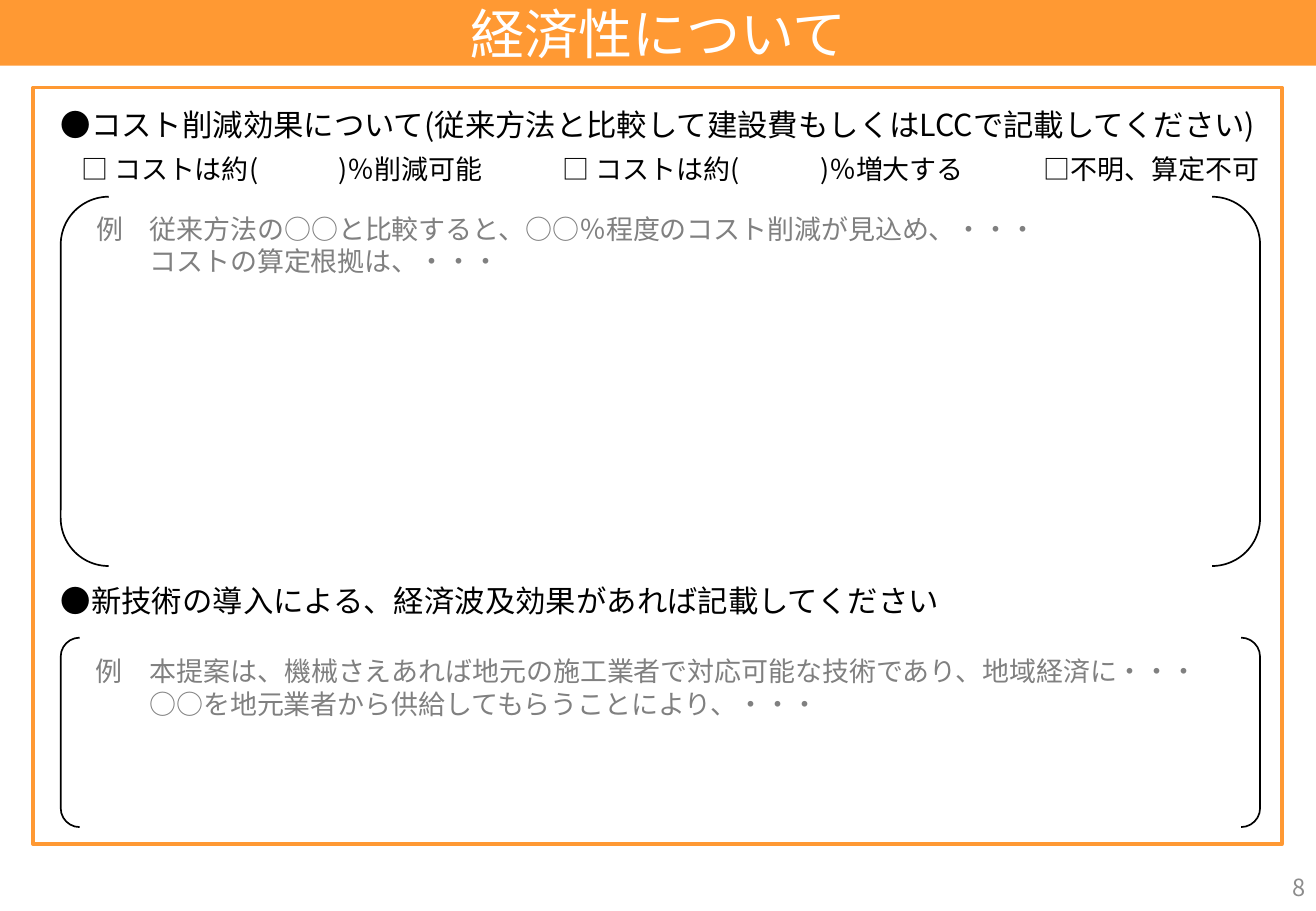
from dataclasses import dataclass

from lxml.etree import SubElement
from pptx import Presentation
from pptx.dml.color import RGBColor
from pptx.enum.shapes import MSO_SHAPE as Preset
from pptx.enum.text import MSO_ANCHOR as Anchor, MSO_AUTO_SIZE as AutoSize, PP_ALIGN as Align
from pptx.oxml.ns import qn
from pptx.shapes.autoshape import Shape
from pptx.slide import Slide
from pptx.util import Inches, Pt

FONT = "Noto Sans CJK JP"
COLORS = {
    "orange": "FF9933",
    "white": "FFFFFF",
    "black": "000000",
    "example": "808080",
    "number": "8C8C8C",
}
PAGE_WIDTH, PAGE_HEIGHT = 10.83, 7.5
BAR_HEIGHT = 0.54
LEFT, SECTION_WIDTH = 0.5, 9.87
EXAMPLE_LEFT, EXAMPLE_INDENT = 0.79, 0.44
OPTION_STEP = 3.96
OPTIONS = ["□ コストは約(　　　)％削減可能", "□ コストは約(　　　)％増大する", "□不明、算定不可"]


@dataclass(frozen=True)
class Section:
    """A heading with a bracketed answer field and its example text."""

    heading: str
    heading_top: float
    heading_width: float
    bracket_top: float
    bracket_height: float
    curve: float
    example: tuple[str, str]
    example_top: float
    example_width: float


SECTIONS = [
    Section(
        "●コスト削減効果について(従来方法と比較して建設費もしくはLCCで記載してください)",
        0.87, 10.22, 1.62, 3.04, 0.13,
        ("例　従来方法の○○と比較すると、○○％程度のコスト削減が見込め、・・・",
         "コストの算定根拠は、・・・"),
        1.75, 7.85,
    ),
    Section(
        "●新技術の導入による、経済波及効果があれば記載してください",
        4.79, 7.32, 5.25, 1.56, 0.1,
        ("例　本提案は、機械さえあれば地元の施工業者で対応可能な技術であり、地域経済に・・・",
         "○○を地元業者から供給してもらうことにより、・・・"),
        5.39, 9.2,
    ),
]


def rgb(name: str) -> RGBColor:
    """Look up a named colour."""
    return RGBColor.from_string(COLORS[name])


def write(box: Shape, *lines: str, size: int, color: str, align: Align = Align.LEFT,
          anchor: Anchor = Anchor.TOP, inset: float = 0, indent: float = 0) -> None:
    """Fill a box with formatted lines, indenting those after the first."""
    frame = box.text_frame
    frame.word_wrap = True
    frame.auto_size = AutoSize.NONE
    frame.vertical_anchor = anchor
    frame.margin_left = frame.margin_right = Inches(inset)
    frame.margin_top = frame.margin_bottom = Inches(inset / 2)
    for index, line in enumerate(lines):
        para = frame.add_paragraph() if index else frame.paragraphs[0]
        para.alignment = align
        if index and indent:
            para._p.get_or_add_pPr().set("marL", str(Inches(indent)))
        span = para.add_run()
        span.text = line
        span.font.size = Pt(size)
        span.font.name = FONT
        span.font.color.rgb = rgb(color)
        SubElement(span.font._element, qn("a:ea"), typeface=FONT)


def add_text(page: Slide, left: float, top: float, width: float, height: float) -> Shape:
    """Add an empty text box placed in inches."""
    return page.shapes.add_textbox(Inches(left), Inches(top), Inches(width), Inches(height))


def add_preset(page: Slide, preset: Preset, left: float, top: float, width: float, height: float,
               fill: str = "", line: str = "", weight: float = 1) -> Shape:
    """Add a preset shape with an optional fill and outline."""
    shape = page.shapes.add_shape(preset, Inches(left), Inches(top), Inches(width), Inches(height))
    shape.shadow.inherit = False
    if fill:
        shape.fill.solid()
        shape.fill.fore_color.rgb = rgb(fill)
    else:
        shape.fill.background()
    if line:
        shape.line.color.rgb = rgb(line)
        shape.line.width = Pt(weight)
    else:
        shape.line.fill.background()
    return shape


def add_title(page: Slide) -> None:
    """Draw the title over its bar."""
    bar = add_preset(page, Preset.RECTANGLE, 0, 0, PAGE_WIDTH, BAR_HEIGHT, fill="orange")
    title = page.shapes.title
    title.left, title.top = Inches(3.85), Inches(0)
    title.width, title.height = Inches(3.14), Inches(BAR_HEIGHT)
    write(title, "経済性について", size=32, color="white", align=Align.CENTER, anchor=Anchor.MIDDLE)
    bar.element.addnext(title.element)


def add_options(page: Slide) -> None:
    """Write the cost options at evenly spaced tab stops."""
    box = add_text(page, 0.67, 1.26, SECTION_WIDTH, 0.27)
    write(box, "\t".join(OPTIONS), size=16, color="black")
    properties = box.text_frame.paragraphs[0]._p.get_or_add_pPr()
    stops = SubElement(properties, qn("a:tabLst"))
    for index in range(1, len(OPTIONS)):
        SubElement(stops, qn("a:tab"), pos=str(Inches(OPTION_STEP * index)), algn="l")


def add_section(page: Slide, section: Section) -> None:
    """Draw one heading, its brackets and its example."""
    heading = add_text(page, LEFT, section.heading_top, section.heading_width, 0.3)
    write(heading, section.heading, size=18, color="black")
    bracket = add_preset(page, Preset.DOUBLE_BRACKET, LEFT, section.bracket_top,
                         SECTION_WIDTH, section.bracket_height, line="black")
    bracket.adjustments[0] = section.curve
    example = add_text(page, EXAMPLE_LEFT, section.example_top, section.example_width, 0.54)
    write(example, *section.example, size=16, color="example", indent=EXAMPLE_INDENT)


def main() -> None:
    """Build and save the slide."""
    deck = Presentation()
    deck.slide_width, deck.slide_height = Inches(PAGE_WIDTH), Inches(PAGE_HEIGHT)
    page = deck.slides.add_slide(deck.slide_layouts.get_by_name("Title Only"))
    add_title(page)
    add_preset(page, Preset.RECTANGLE, 0.27, 0.72, 10.28, 6.23, line="orange", weight=2)
    add_options(page)
    for section in SECTIONS:
        add_section(page, section)
    number = add_text(page, 8.4, 7.1, 2.44, 0.4)
    write(number, "8", size=14, color="number", align=Align.RIGHT, anchor=Anchor.MIDDLE, inset=0.1)
    deck.save("out.pptx")


if __name__ == "__main__":
    main()
